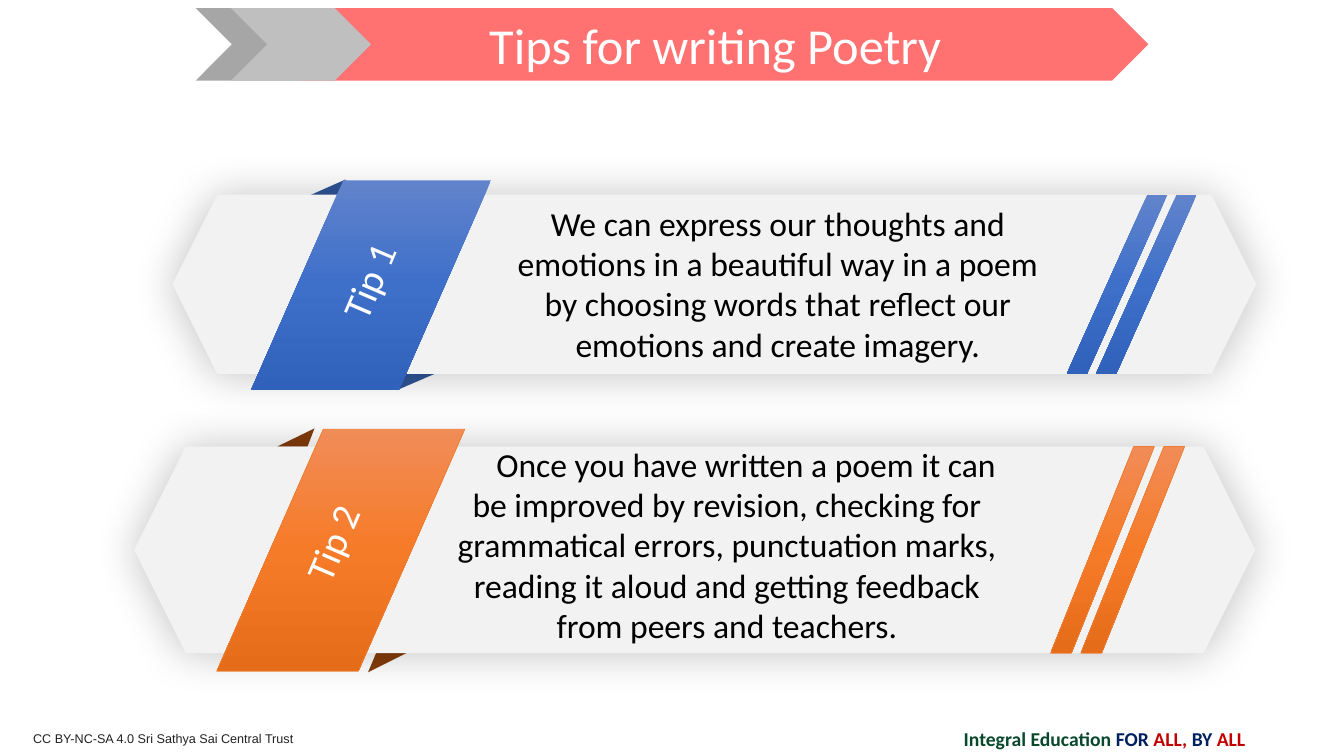
"""Build the slide "Tips for writing Poetry" with two ribbon banners."""
import copy
import pptx
import pptx.util
import pptx.dml.color
import pptx.enum.shapes
import pptx.enum.text
import pptx.oxml
import pptx.oxml.ns

Inches = pptx.util.Inches
RGBColor = pptx.dml.color.RGBColor
Shape = pptx.enum.shapes.MSO_SHAPE
Align = pptx.enum.text.PP_ALIGN
Anchor = pptx.enum.text.MSO_ANCHOR

WHITE = RGBColor(0xFF, 0xFF, 0xFF)
BLACK = RGBColor(0x00, 0x00, 0x00)
INK = RGBColor(0x22, 0x22, 0x22)
GREEN = RGBColor(0x08, 0x48, 0x2B)
NAVY = RGBColor(0x00, 0x20, 0x60)
RED = RGBColor(0xC0, 0x00, 0x00)
CORAL = RGBColor(0xFF, 0x72, 0x71)
DARK_GREY = RGBColor(0xA6, 0xA6, 0xA6)
MID_GREY = RGBColor(0xBF, 0xBF, 0xBF)
PALE_GREY = RGBColor(0xF2, 0xF2, 0xF2)
BROWN = RGBColor(0x84, 0x3C, 0x0B)
DEEP_BLUE = RGBColor(0x2F, 0x55, 0x97)
ORANGE_LINE = RGBColor(0xED, 0x7D, 0x31)
ORANGES = [RGBColor(0xF1, 0x8C, 0x57), RGBColor(0xF6, 0x7B, 0x28), RGBColor(0xE5, 0x6C, 0x19)]
BLUES = [RGBColor(0x61, 0x83, 0xCB), RGBColor(0x3E, 0x70, 0xCA), RGBColor(0x30, 0x62, 0xBB)]

SHADOW = (
    f'<a:effectLst {pptx.oxml.ns.nsdecls("a")}>'
    '<a:outerShdw blurRad="393700" dist="0" dir="0" algn="ctr" rotWithShape="0">'
    '<a:srgbClr val="000000"><a:alpha val="24000"/></a:srgbClr>'
    '</a:outerShdw></a:effectLst>'
)

deck = pptx.Presentation()
deck.slide_width = Inches(13.33)
deck.slide_height = Inches(7.5)
page = deck.slides.add_slide(deck.slide_layouts[6])


def add_text(text, place, size, color=BLACK, font="Calibri", bold=False,
             align=Align.CENTER, anchor=Anchor.TOP, rotation=0, indent=0):
    """Add a text box; text is a string or a list of (string, colour) runs."""
    box = page.shapes.add_textbox(*map(Inches, place))
    box.rotation = rotation
    frame = box.text_frame
    frame.word_wrap = True
    frame.vertical_anchor = anchor
    para = frame.paragraphs[0]
    para.alignment = align
    if indent:
        para._p.get_or_add_pPr().set("indent", str(Inches(indent)))
    for words, tint in [(text, color)] if isinstance(text, str) else text:
        span = para.add_run()
        span.text = words
        span.font.name = font
        span.font.size = pptx.util.Pt(size)
        span.font.bold = bold
        span.font.color.rgb = tint
    return box


def add_block(kind, place, colors, adjustment=None, outline=None):
    """Add a preset shape with one solid colour or a list of gradient colours."""
    block = page.shapes.add_shape(kind, *map(Inches, place))
    block.shadow.inherit = False
    if adjustment is not None:
        block.adjustments[0] = adjustment
    if isinstance(colors, list):
        block.fill.gradient()
        block.fill.gradient_angle = 270
        stops = block._element.spPr.find(".//" + pptx.oxml.ns.qn("a:gsLst"))
        stops.append(copy.deepcopy(stops[-1]))
        for index, stop in enumerate(block.fill.gradient_stops):
            stop.position = index / 2
            stop.color.rgb = colors[index]
    else:
        block.fill.solid()
        block.fill.fore_color.rgb = colors
    if outline is None:
        block.line.fill.background()
    else:
        block.line.color.rgb = outline
        block.line.width = pptx.util.Pt(0.5)
    return block


add_text("CC BY-NC-SA 4.0 Sri Sathya Sai Central Trust", (0.23, 7.2, 6.67, 0.25), 9,
         color=INK, font="Arial", align=Align.LEFT)
add_text([("Integral Education ", GREEN), ("FOR ", NAVY), ("ALL, ", RED), ("BY", NAVY), (" ALL", RED)],
         (8.51, 7.1, 4.89, 0.45), 14, bold=True, anchor=Anchor.MIDDLE)

title_place = (2.98, 0.08, 8.41, 0.72)
add_block(Shape.CHEVRON, (1.94, 0.08, 1.39, 0.72), DARK_GREY)
add_block(Shape.PENTAGON, title_place, CORAL)
add_block(Shape.CHEVRON, (2.29, 0.08, 1.39, 0.72), MID_GREY)
add_text("Tips for writing Poetry", (2.98, 0.08, 8.23, 0.72), 36, color=WHITE, anchor=Anchor.MIDDLE)

tips = [
    dict(
        label="Tip 2", label_place=(2.28, 5.1, 2.02, 0.57),
        text="Once you have written a poem it can be improved by revision, checking for grammatical "
             "errors, punctuation marks, reading it aloud and getting feedback from peers and teachers.",
        text_place=(4.29, 4.35, 5.84, 2.12), indent=0.38,
        banner=(1.33, 4.43, 11.12, 2.05), ribbon=(2.15, 4.26, 2.46, 2.4),
        stripes=(10.72, 10.42), stripe_width=1.03,
        colors=ORANGES, outline=ORANGE_LINE, fold_color=BROWN,
        folds=[[(3.12, 4.25), (3.05, 4.43), (2.75, 4.43)], [(3.65, 6.67), (3.73, 6.48), (4.03, 6.48)]],
    ),
    dict(
        label="Tip 1", label_place=(2.64, 2.5, 2.02, 0.57),
        text="We can express our thoughts and emotions in a beautiful way in a poem by choosing "
             "words that reflect our emotions and create imagery.",
        text_place=(4.85, 1.96, 5.73, 1.72), indent=0,
        banner=(1.71, 1.93, 10.75, 1.78), ribbon=(2.49, 1.79, 2.38, 2.08),
        stripes=(10.87, 10.58), stripe_width=1,
        colors=BLUES, outline=None, fold_color=DEEP_BLUE,
        folds=[[(3.43, 1.78), (3.36, 1.94), (3.07, 1.94)], [(3.94, 3.87), (4.02, 3.71), (4.31, 3.71)]],
    ),
]

for tip in tips:
    for corners in tip["folds"]:
        points = [(Inches(x), Inches(y)) for x, y in corners]
        builder = page.shapes.build_freeform(*points[0])
        builder.add_line_segments(points[1:], close=True)
        fold = builder.convert_to_shape()
        fold.shadow.inherit = False
        fold.fill.solid()
        fold.fill.fore_color.rgb = tip["fold_color"]
        fold.line.fill.background()

    banner = add_block(Shape.HEXAGON, tip["banner"], PALE_GREY)
    properties = banner._element.spPr
    properties.replace(properties.find(pptx.oxml.ns.qn("a:effectLst")), pptx.oxml.parse_xml(SHADOW))

    add_block(Shape.PARALLELOGRAM, tip["ribbon"], tip["colors"], 0.44, tip["outline"])
    top, height = tip["banner"][1], tip["banner"][3]
    for left in tip["stripes"]:
        add_block(Shape.PARALLELOGRAM, (left, top, tip["stripe_width"], height),
                  tip["colors"], 0.8, tip["outline"])

    add_text(tip["text"], tip["text_place"], 24, indent=tip["indent"])
    add_text(tip["label"], tip["label_place"], 28, color=WHITE, rotation=293.1)

deck.save("out.pptx")
